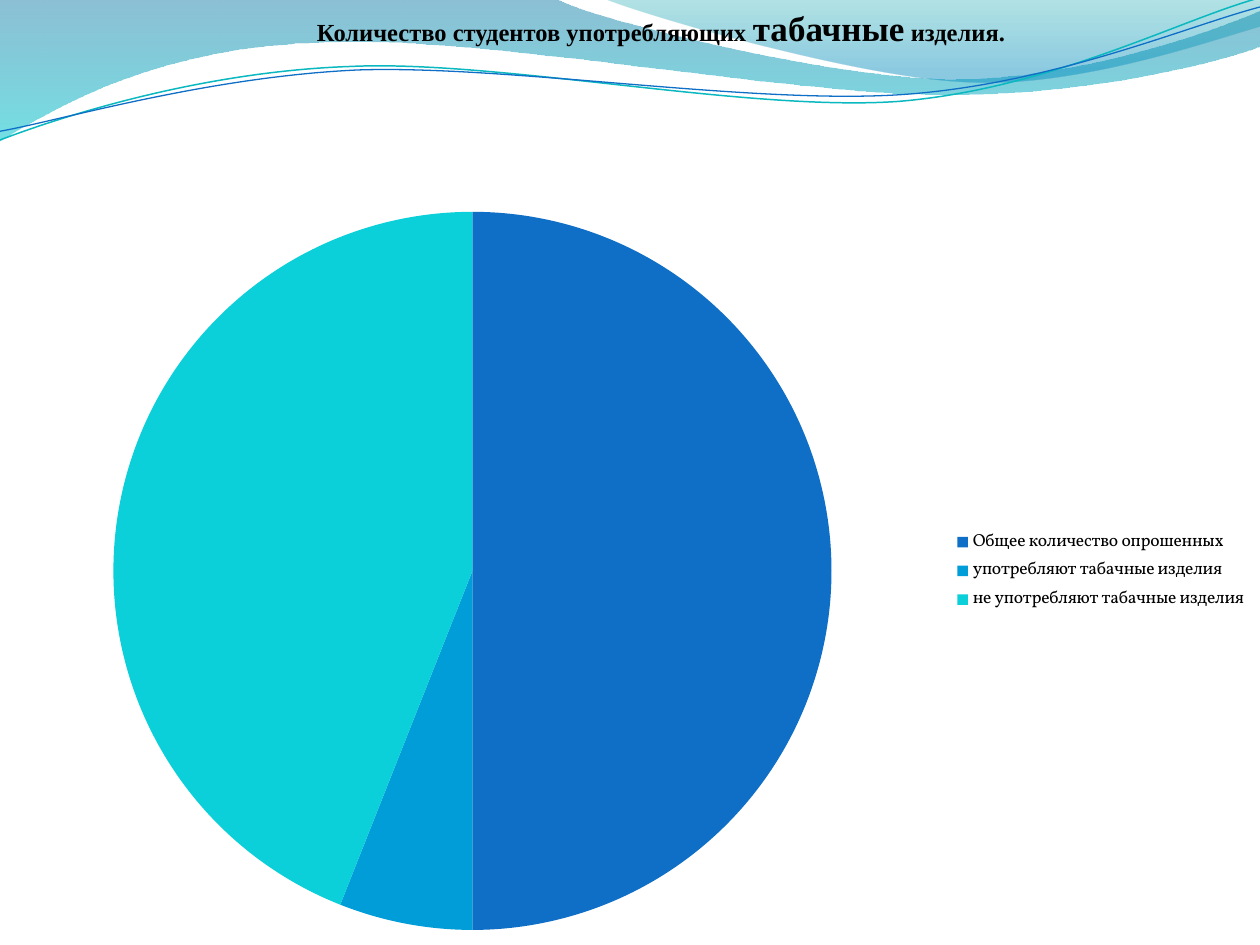
from lxml import etree
from pptx import Presentation
from pptx import util as u
from pptx.chart import data
from pptx.dml.color import RGBColor
from pptx.enum import chart as charts, text
from pptx.oxml.ns import qn

Pt = u.Pt
BLACK = RGBColor(0x00, 0x00, 0x00)
DEEP_BLUE = RGBColor(0x00, 0x74, 0xA1)
AQUA = RGBColor(0x00, 0xC6, 0xCF)
SEA_GREEN = RGBColor(0x00, 0xA1, 0xA9)
SKY = RGBColor(0x00, 0x8B, 0xBF)
TEAL = RGBColor(0x0A, 0xB8, 0xBF)
BLUE = RGBColor(0x0F, 0x6F, 0xC6)
AZURE = RGBColor(0x00, 0x9D, 0xD9)
TURQUOISE = RGBColor(0x0B, 0xD0, 0xD9)

BAND = [
    [(317, -1)],
    [(343, 12), (478, 45.2), (546, 45.2)],
    [(614, 45.2), (690, 18.8), (720, 6.5)],
    [(720.7, 26)],
    [(708, 31.7), (626, 54.8), (537, 54)],
    [(448, 54), (275, 20.2), (185, 24.5)],
    [(93, 26), (33, 59.8), (-0.7, 81.4)],
]
CREST = [
    [(366.5, 8), (491, 44.6), (553.7, 47)],
    [(616.3, 49.7), (692, 23), (720, 15)],
    [(720, 0)],
]
TEAL_WAVE = [
    [(34.5, 67), (113.8, 41), (199.5, 37.5)],
    [(284.4, 33.8), (427, 64), (513.4, 57.6)],
    [(599.8, 51), (675.4, 10.8), (718.6, -1.4)],
]
BLUE_WAVE = [
    [(33.8, 69), (118, 44), (203.8, 40.3)],
    [(290, 36.7), (430, 60.5), (516.2, 54)],
    [(602, 48.2), (677.5, 15), (720, 4.3)],
]


def add_outline(slide, start, segments, close):
    builder = slide.shapes.build_freeform(*start, scale=Pt(1))
    builder.add_line_segments([p for s in segments for p in s], close=close)
    outline = builder.convert_to_shape()
    outline.shadow.inherit = False
    steps = iter(list(outline.element.iter(qn("a:lnTo"))))
    for segment in segments:
        step = next(steps)
        if len(segment) == 3:
            step.tag = qn("a:cubicBezTo")
            for _ in range(2):
                control = next(steps)
                step.append(control[0])
                control.getparent().remove(control)
    return outline


def add_gradient_area(slide, start, segments, stops):
    area = add_outline(slide, start, segments, True)
    area.line.fill.background()
    area.fill.gradient()
    area.fill.gradient_angle = 270
    for stop, (position, color, opacity) in zip(area.fill.gradient_stops, stops):
        stop.position = position
        stop.color.rgb = color
    for rgb, (_, _, opacity) in zip(area.element.spPr.iter(qn("a:srgbClr")), stops):
        etree.SubElement(rgb, qn("a:alpha")).set("val", str(opacity * 1000))


def add_wave_header(slide):
    add_gradient_area(slide, (0, 0), BAND, [(0, DEEP_BLUE, 45), (1, AQUA, 55)])
    add_gradient_area(slide, (345, -0.7), CREST, [(0, SEA_GREEN, 30), (0.8, SKY, 45)])
    for start, segments, color, width in (
        ((0, 80), TEAL_WAVE, TEAL, 0.85),
        ((0, 75), BLUE_WAVE, BLUE, 0.75),
    ):
        wave = add_outline(slide, start, segments, False)
        wave.fill.background()
        wave.line.color.rgb = color
        wave.line.width = Pt(width)


def add_smoking_chart(slide, left, top, width, height):
    answers = data.CategoryChartData()
    answers.categories = [
        "Общее количество опрошенных",
        "употребляют табачные изделия",
        "не употребляют табачные изделия",
    ]
    answers.add_series("Series 1", (50, 6, 44))
    chart = slide.shapes.add_chart(
        charts.XL_CHART_TYPE.PIE, Pt(left), Pt(top), Pt(width), Pt(height), answers
    ).chart
    chart.has_title = False
    chart.font.size = Pt(10)
    chart.font.name = "Vollkorn"
    chart.font.color.rgb = BLACK
    chart.has_legend = True
    chart.legend.position = charts.XL_LEGEND_POSITION.RIGHT
    chart.legend.include_in_layout = True
    pie = chart.plots[0]
    pie.vary_by_categories = True
    for index, color in enumerate((BLUE, AZURE, TURQUOISE)):
        fill = pie.series[0].points[index].format.fill
        fill.solid()
        fill.fore_color.rgb = color

    plot_area = chart.element.find(".//" + qn("c:plotArea"))
    for old in plot_area.findall(qn("c:layout")):
        plot_area.remove(old)
    layout = etree.Element(qn("c:layout"))
    plot_area.insert(0, layout)
    manual = etree.SubElement(layout, qn("c:manualLayout"))
    for tag, value in {
        "layoutTarget": "inner", "xMode": "edge", "yMode": "edge",
        "x": "0.09", "y": "0.02", "w": "0.57", "h": "0.96",
    }.items():
        etree.SubElement(manual, qn("c:" + tag)).set("val", value)


def add_heading(slide, left, top, width, height):
    heading = slide.shapes.add_textbox(Pt(left), Pt(top), Pt(width), Pt(height))
    frame = heading.text_frame
    for name, value in {
        "word_wrap": True,
        "vertical_anchor": text.MSO_ANCHOR.MIDDLE,
        "auto_size": text.MSO_AUTO_SIZE.SHAPE_TO_FIT_TEXT,
    }.items():
        setattr(frame, name, value)
    line = frame.paragraphs[0]
    line.alignment = text.PP_ALIGN.CENTER
    line._p.get_or_add_pPr().set("indent", str(Pt(35.5)))
    for words, size in (
        ("Количество студентов употребляющих ", 14),
        ("табачные", 20),
        (" изделия.", 14),
    ):
        run = line.add_run()
        run.text = words
        run.font.color.rgb = BLACK
        for name, value in {"name": "Times New Roman", "size": Pt(size), "bold": True}.items():
            setattr(run.font, name, value)


def main():
    deck = Presentation()
    deck.slide_width, deck.slide_height = Pt(720), Pt(540)
    slide = deck.slides.add_slide(deck.slide_layouts[6])
    add_wave_header(slide)
    add_smoking_chart(slide, 0, 112.5, 720, 427.5)
    add_heading(slide, 0, 0, 720, 31.5)
    deck.save("out.pptx")


if __name__ == "__main__":
    main()
